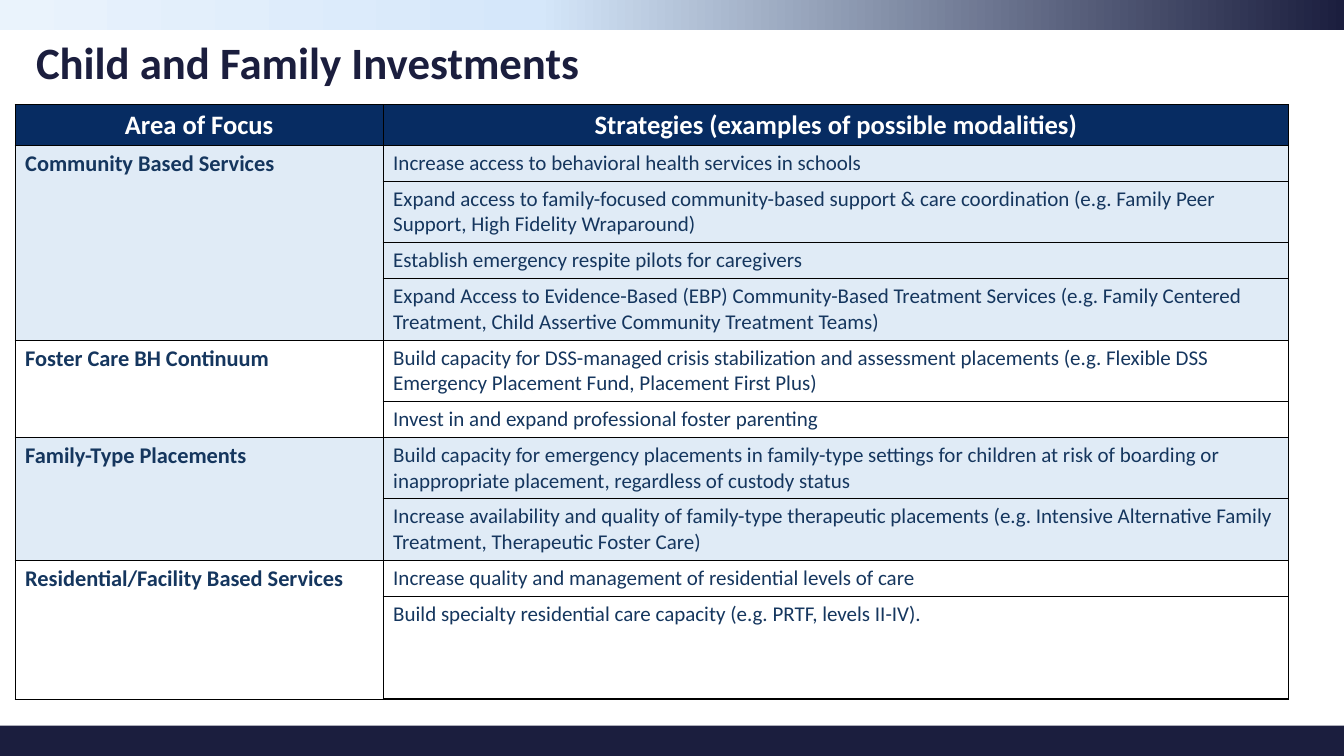
import copy

import pptx
import pptx.dml.color
import pptx.enum.shapes
import pptx.enum.text
import pptx.oxml
import pptx.oxml.ns
import pptx.util
from lxml import etree

RGBColor = pptx.dml.color.RGBColor
ALIGN = pptx.enum.text.PP_ALIGN
ANCHOR = pptx.enum.text.MSO_ANCHOR

NAVY = RGBColor(0x1B, 0x1E, 0x3E)
SKY = RGBColor(0xD5, 0xE7, 0xFA)
MIST = RGBColor(0xEA, 0xF3, 0xFC)
HEADER = RGBColor(0x07, 0x2C, 0x62)
TEXT = RGBColor(0x15, 0x36, 0x5E)
BAND = RGBColor(0xE0, 0xEB, 0xF6)
WHITE = RGBColor(0xFF, 0xFF, 0xFF)
BLACK = RGBColor(0x00, 0x00, 0x00)

SLIDE_W = pptx.util.Inches(13.33)
SLIDE_H = pptx.util.Inches(7.5)
BAR = 0.04  # share of the slide's height
COLUMNS = (3.65, 8.98)
HEADER_ROW, ONE_LINE, TWO_LINES, LAST_ROW = 0.38, 0.34, 0.6, 1.02
THIN, THICK = 0.68, 1

TITLE_FONT = {"name": "Calibri", "size": pptx.util.Pt(32), "bold": True, "color": NAVY}
HEADER_FONT = {"name": "Calibri", "size": pptx.util.Pt(19), "bold": True, "color": WHITE}
AREA_FONT = {"name": "Calibri", "size": pptx.util.Pt(16), "bold": True, "color": TEXT}
STRATEGY_FONT = {"name": "Calibri", "size": pptx.util.Pt(15), "bold": False, "color": TEXT}

HEADINGS = ("Area of Focus", "Strategies (examples of possible modalities)")
# Area, fill, anchor and line width of its strategies, then (strategy, row height)
AREAS = [
    ("Community Based Services", BAND, ANCHOR.MIDDLE, THIN, [
        ("Increase access to behavioral health services in schools", ONE_LINE),
        ("Expand access to family-focused community-based support & care coordination "
         "(e.g. Family Peer Support, High Fidelity Wraparound)", TWO_LINES),
        ("Establish emergency respite pilots for caregivers", ONE_LINE),
        ("Expand Access to Evidence-Based (EBP) Community-Based Treatment Services "
         "(e.g. Family Centered Treatment, Child Assertive Community Treatment Teams)",
         TWO_LINES),
    ]),
    ("Foster Care BH Continuum", WHITE, ANCHOR.MIDDLE, THIN, [
        ("Build capacity for DSS-managed crisis stabilization and assessment placements "
         "(e.g. Flexible DSS Emergency Placement Fund, Placement First Plus)", TWO_LINES),
        ("Invest in and expand professional foster parenting", ONE_LINE),
    ]),
    ("Family-Type Placements", BAND, ANCHOR.TOP, THICK, [
        ("Build capacity for emergency placements in family-type settings for children "
         "at risk of boarding or inappropriate placement, regardless of custody status",
         TWO_LINES),
        ("Increase availability and quality of family-type therapeutic placements "
         "(e.g. Intensive Alternative Family Treatment, Therapeutic Foster Care)",
         TWO_LINES),
    ]),
    ("Residential/Facility Based Services", WHITE, ANCHOR.TOP, THICK, [
        ("Increase quality and management of residential levels of care", ONE_LINE),
        ("Build specialty residential care capacity (e.g. PRTF, levels II-IV).", LAST_ROW),
    ]),
]


def write(tf, text, font, align=ALIGN.LEFT):
    p = tf.paragraphs[0]
    p.alignment = align
    r = p.add_run()
    r.text = text
    for key, value in font.items():
        if key == "color":
            r.font.color.rgb = value
        else:
            setattr(r.font, key, value)
    return p


def add_bar(s, top):
    """Add a full-width bar; top is a share of the slide's height."""
    sp = s.shapes.add_shape(pptx.enum.shapes.MSO_SHAPE.RECTANGLE, 0,
                            int(SLIDE_H * top), SLIDE_W, int(SLIDE_H * BAR))
    sp.shadow.inherit = False
    sp.line.fill.background()
    sp.fill.solid()
    sp.fill.fore_color.rgb = NAVY
    return sp


def fade(sp):
    """Fill a shape with navy, sky and mist, running from right to left."""
    sp.fill.gradient()
    sp.fill.gradient_angle = 180
    first = sp.fill.gradient_stops[0]._gs
    first.addnext(copy.deepcopy(first))
    for stop, (position, color) in zip(sp.fill.gradient_stops,
                                       [(0, NAVY), (0.6, SKY), (1, MIST)]):
        stop.position = position
        stop.color.rgb = color


def add_title(s, text):
    sp = s.shapes.title
    box = {"left": 0.15, "top": 0.42, "width": 5.91, "height": 0.45}
    for key, value in box.items():
        setattr(sp, key, pptx.util.Inches(value))
    tf = sp.text_frame
    tf.word_wrap = True
    tf.auto_size = pptx.enum.text.MSO_AUTO_SIZE.NONE
    tf.vertical_anchor = ANCHOR.MIDDLE
    p = write(tf, text, TITLE_FONT, ALIGN.CENTER)
    p.line_spacing = 0.9
    p.space_before = pptx.util.Pt(10)


def set_borders(cell, width):
    """Draw all four sides; the left one is always thin."""
    tcPr = cell._tc.get_or_add_tcPr()
    for side in "LRTB":
        points = THIN if side == "L" else width
        ln = etree.SubElement(tcPr, pptx.oxml.ns.qn(f"a:ln{side}"),
                              w=str(int(pptx.util.Pt(points))))
        fill = etree.SubElement(ln, pptx.oxml.ns.qn("a:solidFill"))
        etree.SubElement(fill, pptx.oxml.ns.qn("a:srgbClr"), val=str(BLACK))


def style_cell(cell, fill, anchor, width=THIN):
    set_borders(cell, width)
    cell.fill.solid()
    cell.fill.fore_color.rgb = fill
    cell.vertical_anchor = anchor


def add_strategy_table(s):
    heights = [HEADER_ROW] + [h for area in AREAS for _, h in area[-1]]
    table = s.shapes.add_table(
        len(heights), len(COLUMNS), pptx.util.Inches(0.15), pptx.util.Inches(1.04),
        pptx.util.Inches(sum(COLUMNS)), pptx.util.Inches(sum(heights))).table
    for column, width in zip(table.columns, COLUMNS):
        column.width = pptx.util.Inches(width)
    for row, height in zip(table.rows, heights):
        row.height = pptx.util.Inches(height)

    for cell, heading in zip(table.rows[0].cells, HEADINGS):
        style_cell(cell, HEADER, ANCHOR.MIDDLE)
        for side, inset in {"left": 0.08, "right": 0.08, "top": 0.04, "bottom": 0.04}.items():
            setattr(cell, f"margin_{side}", pptx.util.Inches(inset))
        write(cell.text_frame, heading, HEADER_FONT, ALIGN.CENTER)

    top = 1
    for area, fill, anchor, width, strategies in AREAS:
        for row, (strategy, _) in enumerate(strategies, top):
            style_cell(table.cell(row, 0), fill, ANCHOR.TOP)
            style_cell(table.cell(row, 1), fill, anchor, width)
            write(table.cell(row, 1).text_frame, strategy, STRATEGY_FONT)
        write(table.cell(top, 0).text_frame, area, AREA_FONT)
        table.cell(top, 0).merge(table.cell(row, 0))
        top = row + 1


def main():
    prs = pptx.Presentation()
    prs.slide_width, prs.slide_height = SLIDE_W, SLIDE_H
    s = prs.slides.add_slide(prs.slide_layouts[5])
    add_bar(s, 1 - BAR)
    fade(add_bar(s, 0))
    add_title(s, "Child and Family Investments\u00a0".replace("\u00a0", " "))
    add_strategy_table(s)
    prs.save("out.pptx")


if __name__ == "__main__":
    main()
